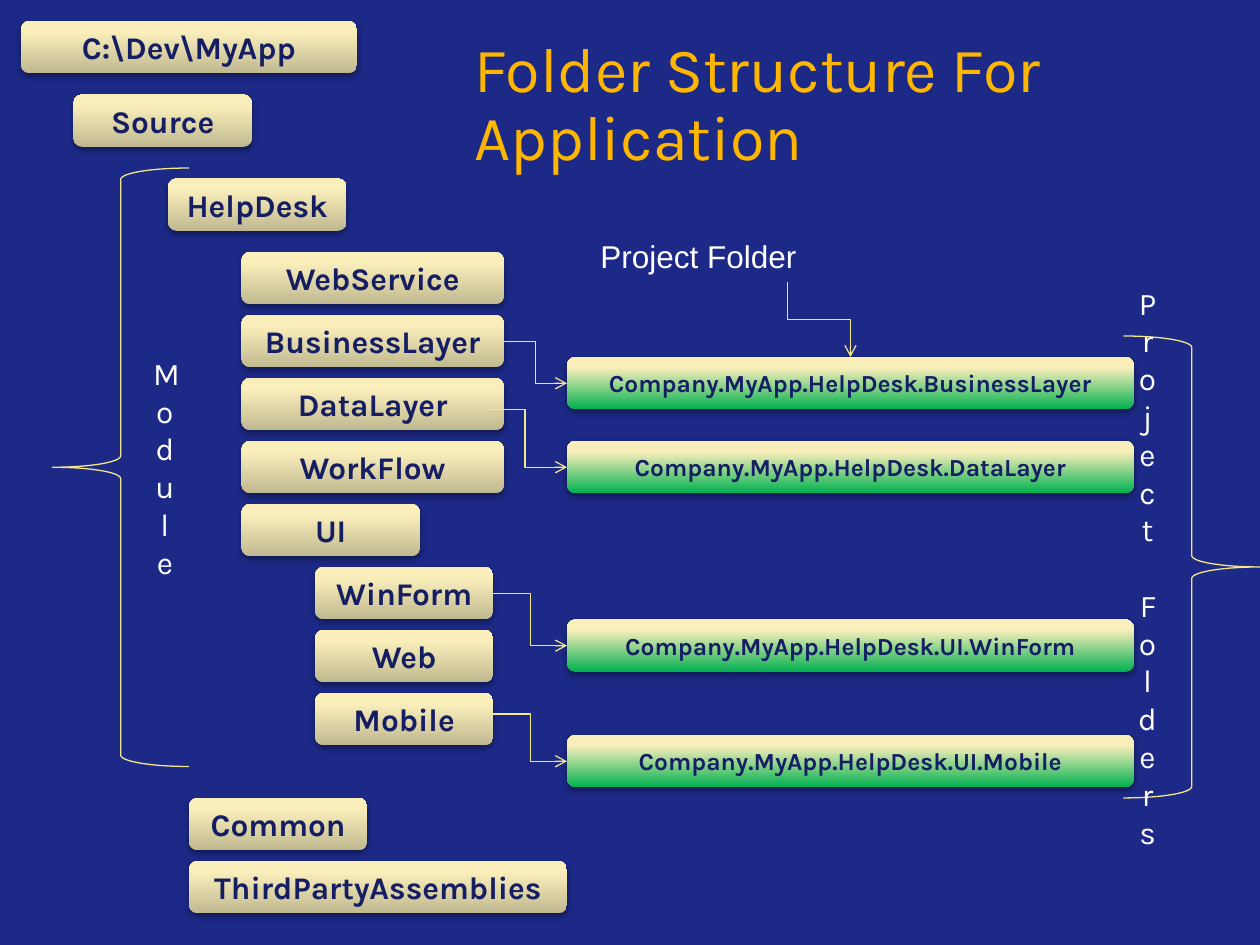
from copy import deepcopy

from lxml.etree import SubElement
from pptx import Presentation
from pptx.dml.color import RGBColor
from pptx.enum.shapes import MSO_CONNECTOR, MSO_SHAPE
from pptx.enum.text import MSO_ANCHOR, MSO_AUTO_SIZE, PP_ALIGN
from pptx.oxml.ns import qn
from pptx.util import Pt

NAVY, INK, GOLD = "1C2986", "151E63", "FFB601"
WHITE, LINE = "FFFFFF", "F4E68D"
SAND, GREEN = "C0B890", "00B050"
TOP, LEFT, BOTTOM, RIGHT = range(4)
FOLDER_HEIGHT, ROW_PITCH = 30, 36


def colour(hex_code):
    return RGBColor.from_string(hex_code)


def add_run(paragraph, text, size, hex_code, font="Karla", bold=False):
    run = paragraph.add_run()
    run.text = text
    run.font.name, run.font.size, run.font.bold = font, Pt(size), bold
    run.font.color.rgb = colour(hex_code)


def fill_gradient(shape, base):
    """Shade from the base colour at the bottom to cream at the top."""
    shape.fill.gradient()
    stops = shape.fill._fill._gradFill.find(qn("a:gsLst"))
    stops.append(deepcopy(stops[-1]))
    shades = ((0, base), (0.8, "FAEFBB"), (1, "FCF1BA"))
    for stop, (position, shade) in zip(shape.fill.gradient_stops, shades):
        stop.position = position
        stop.color.rgb = colour(shade)
    shape.fill.gradient_angle = 90


def add_soft_shadow(shape):
    shape.shadow.inherit = False
    effects = shape._element.spPr.find(qn("a:effectLst"))
    shadow = SubElement(effects, qn("a:outerShdw"), blurRad=str(Pt(3.1)),
                        dist=str(Pt(1.8)), dir="5400000", rotWithShape="0")
    black = SubElement(shadow, qn("a:srgbClr"), val="000000")
    SubElement(black, qn("a:alpha"), val="35000")


def add_folder(slide, name, left, top, width, base=SAND, size=18):
    folder = slide.shapes.add_shape(MSO_SHAPE.ROUNDED_RECTANGLE, Pt(left), Pt(top),
                                    Pt(width), Pt(FOLDER_HEIGHT))
    fill_gradient(folder, base)
    folder.line.fill.background()
    add_soft_shadow(folder)
    folder.text_frame.vertical_anchor = MSO_ANCHOR.MIDDLE
    paragraph = folder.text_frame.paragraphs[0]
    paragraph.alignment = PP_ALIGN.CENTER
    add_run(paragraph, name, size, INK, bold=True)
    return folder


def add_arrow(slide, start, end):
    arrow = slide.shapes.add_connector(MSO_CONNECTOR.ELBOW, *map(Pt, start + end))
    arrow.line.color.rgb = colour(LINE)
    arrow.line.width = Pt(0.75)
    SubElement(arrow.line._get_or_add_ln(), qn("a:tailEnd"), type="arrow")
    SubElement(arrow._element.spPr, qn("a:effectLst"))
    return arrow


def add_title(slide, left, top, width, height):
    title = slide.shapes.title
    title.left, title.top, title.width, title.height = map(Pt, (left, top, width, height))
    frame = title.text_frame
    frame.word_wrap = True
    frame.auto_size = MSO_AUTO_SIZE.NONE
    frame.vertical_anchor = MSO_ANCHOR.TOP
    paragraph = frame.paragraphs[0]
    paragraph.alignment = PP_ALIGN.LEFT
    paragraph.line_spacing = 0.9
    add_run(paragraph, "Folder Structure For Application", 36, GOLD)


def add_folder_tree(slide, left, top):
    """Place the source folders and return them by name."""
    groups = (  # indent, offset of first row, (name, width) for each row
        (0, 0, (("C:\\Dev\\MyApp", 192),)),
        (30, 42, (("Source", 102),)),
        (84, 90, (("HelpDesk", 102),)),
        (126, 132, (("WebService", 150), ("BusinessLayer", 150), ("DataLayer", 150),
                    ("WorkFlow", 150), ("UI", 102))),
        (168, 312, (("WinForm", 102), ("Web", 102), ("Mobile", 102))),
        (96, 444, (("Common", 102), ("ThirdPartyAssemblies", 216))),
    )
    return {
        name: add_folder(slide, name, left + indent, top + offset + row * ROW_PITCH, width)
        for indent, offset, rows in groups
        for row, (name, width) in enumerate(rows)
    }


def add_project_folders(slide, left, top, width, tree):
    """Place the project folders, each with an arrow from its source folder."""
    projects = (  # source folder, name, offset, free start of the arrow
        ("BusinessLayer", "BusinessLayer", 0, None),
        ("DataLayer", "DataLayer", 48, (-48, 30)),
        ("WinForm", "UI.WinForm", 150, None),
        ("Mobile", "UI.Mobile", 216, (-42, 204)),
    )
    folders = {}
    for source, name, offset, start in projects:
        folder = add_folder(slide, "Company.MyApp.HelpDesk." + name, left, top + offset,
                            width, GREEN, 14)
        start_x, start_y = start or (0, 0)
        arrow = add_arrow(slide, (left + start_x, top + start_y),
                          (left, top + offset + FOLDER_HEIGHT / 2))
        if start is None:
            arrow.begin_connect(tree[source], RIGHT)
        arrow.end_connect(folder, LEFT)
        folders[source] = folder
    return folders


def add_brace(slide, preset, words, left, top, width, height):
    """Place a brace whose narrow text area stacks the letters of its words."""
    brace = slide.shapes.add_shape(preset, *map(Pt, (left, top, width, height)))
    brace.fill.background()
    brace.line.color.rgb = colour(LINE)
    brace.line.width = Pt(0.75)
    brace.shadow.inherit = False
    frame = brace.text_frame
    frame.vertical_anchor = MSO_ANCHOR.MIDDLE
    for index, word in enumerate(words):
        paragraph = frame.add_paragraph() if index else frame.paragraphs[0]
        paragraph.alignment = PP_ALIGN.CENTER
        if index:
            paragraph.space_before = Pt(21.5)
        add_run(paragraph, word, 18, WHITE)


def add_callout(slide, left, top, width, height, target):
    """Place the project folder label and its arrow down to the target."""
    label = slide.shapes.add_textbox(*map(Pt, (left, top, width, height)))
    label.text_frame.word_wrap = True
    label.text_frame.auto_size = MSO_AUTO_SIZE.SHAPE_TO_FIT_TEXT
    add_run(label.text_frame.paragraphs[0], "Project Folder", 18, WHITE, "Arial")

    start_x, start_y = label.left + label.width // 2, label.top + label.height
    end_x, end_y = target.left + target.width // 2, target.top
    arrow = add_arrow(slide, (0, 0), (1, 1))
    arrow.begin_connect(label, BOTTOM)
    arrow.end_connect(target, TOP)
    # A quarter turn makes the elbow leave and arrive vertically.
    across, down = end_x - start_x, end_y - start_y
    arrow.left = (start_x + end_x - down) // 2
    arrow.top = (start_y + end_y - across) // 2
    arrow.width, arrow.height = down, across
    frame = arrow._element.spPr.find(qn("a:xfrm"))
    frame.set("rot", "16200000")
    frame.set("flipH", "1")


def main():
    presentation = Presentation()
    presentation.slide_width, presentation.slide_height = Pt(720), Pt(540)
    slide = presentation.slides.add_slide(presentation.slide_layouts[5])
    slide.background.fill.solid()
    slide.background.fill.fore_color.rgb = colour(NAVY)

    add_title(slide, 264, 18, 426, 86)
    tree = add_folder_tree(slide, 12, 12)
    projects = add_project_folders(slide, 324, 204, 324, tree)
    add_brace(slide, MSO_SHAPE.LEFT_BRACE, ["Module"], 30, 96, 78, 342)
    add_brace(slide, MSO_SHAPE.RIGHT_BRACE, ["Project", "Folders"], 642, 192, 78, 264)
    add_callout(slide, 336, 132, 228, 29, projects["BusinessLayer"])
    presentation.save("out.pptx")


if __name__ == "__main__":
    main()
